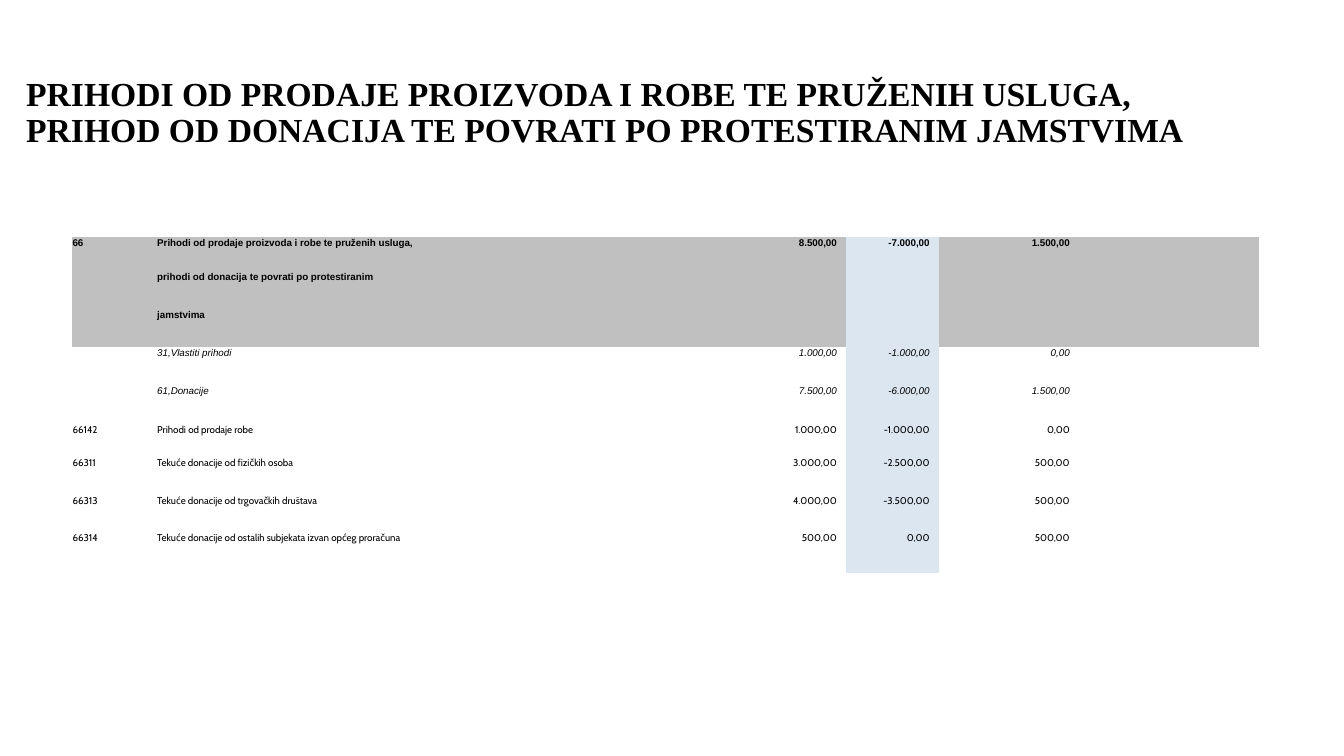
import pptx
import pptx.util
import pptx.dml.color
import pptx.enum.text
import pptx.oxml.ns

PX = 9144  # 100 px to the inch
COLORS = {"text": "000000", "group": "C0C0C0", "change": "DCE6F1"}
NO_GRID_STYLE = "{2D5ABB26-0587-4C30-8999-92F81FD0307C}"

TITLE = ("PRIHODI OD PRODAJE PROIZVODA I ROBE TE PRUŽENIH USLUGA, "
         "PRIHOD OD DONACIJA TE POVRATI PO PROTESTIRANIM JAMSTVIMA")

# Row kinds: text format and base fill
KINDS = {
    "group": ({"font": "Arial", "bold": True}, "group"),
    "source": ({"font": "Arial", "italic": True}, None),
    "account": ({"font": "Cabin"}, None),
}

# Kind, height, then code, name, plan, change, new plan
ROWS = [
    ("group", 33, ("66", "Prihodi od prodaje proizvoda i robe te pruženih usluga,",
                   "8.500,00", "-7.000,00", "1.500,00")),
    ("group", 38, ("", "prihodi od donacija te povrati po protestiranim", "", "", "")),
    ("group", 38, ("", "jamstvima", "", "", "")),
    ("source", 38, ("", "31,Vlastiti prihodi", "1.000,00", "-1.000,00", "0,00")),
    ("source", 38, ("", "61,Donacije", "7.500,00", "-6.000,00", "1.500,00")),
    ("account", 33, ("66142", "Prihodi od prodaje robe",
                     "1.000,00", "-1.000,00", "0,00")),
    ("account", 37, ("66311", "Tekuće donacije od fizičkih osoba",
                     "3.000,00", "-2.500,00", "500,00")),
    ("account", 37, ("66313", "Tekuće donacije od trgovačkih društava",
                     "4.000,00", "-3.500,00", "500,00")),
    ("account", 42, ("66314", "Tekuće donacije od ostalih subjekata izvan općeg proračuna",
                     "500,00", "0,00", "500,00")),
]

# Width, left inset, right inset, alignment
COLUMNS = [(66, 1, 1, "LEFT"), (479, 19, 1, "LEFT"), (223, 1, 9, "RIGHT"),
           (92, 1, 9, "RIGHT"), (318, 1, 188, "RIGHT")]
CHANGE_COLUMN = 3


def px(n):
    return pptx.util.Emu(n * PX)


def rgb(name):
    return pptx.dml.color.RGBColor.from_string(COLORS[name])


def write(tf, text, size=7, font="Arial", bold=False, italic=False,
          align="LEFT", spacing=None):
    p = tf.paragraphs[0]
    p.alignment = getattr(pptx.enum.text.PP_ALIGN, align)
    p.line_spacing = spacing
    r = p.add_run()
    r.text = text
    r.font.size = pptx.util.Pt(size)
    r.font.name = font
    r.font.bold = bold
    r.font.italic = italic
    r.font.color.rgb = rgb("text")


def add_title(s, text, left, top, width, height):
    sp = s.shapes.title
    sp.left, sp.top, sp.width, sp.height = map(px, (left, top, width, height))
    tf = sp.text_frame
    tf.word_wrap = True
    tf.auto_size = pptx.enum.text.MSO_AUTO_SIZE.NONE
    tf.vertical_anchor = pptx.enum.text.MSO_ANCHOR.MIDDLE
    write(tf, text, size=24, font="Times New Roman", bold=True, spacing=0.9)


def fill_cell(cell, text, left, right, fill, **text_format):
    cell.margin_left, cell.margin_right = px(left), px(right)
    cell.margin_top, cell.margin_bottom = px(1), 0
    if fill:
        cell.fill.solid()
        cell.fill.fore_color.rgb = rgb(fill)
    else:
        cell.fill.background()
    write(cell.text_frame, text, **text_format)


def add_revenue_table(s, left, top):
    width = sum(column[0] for column in COLUMNS)
    height = sum(row[1] for row in ROWS)
    frame = s.shapes.add_table(len(ROWS), len(COLUMNS),
                               *map(px, (left, top, width, height)))
    table = frame.table
    table.first_row = table.horz_banding = False
    style = frame._element.find(".//" + pptx.oxml.ns.qn("a:tableStyleId"))
    style.text = NO_GRID_STYLE

    for column, (column_width, *_) in zip(table.columns, COLUMNS):
        column.width = px(column_width)
    for i, (kind, row_height, texts) in enumerate(ROWS):
        table.rows[i].height = px(row_height)
        text_format, row_fill = KINDS[kind]
        for j, (text, column) in enumerate(zip(texts, COLUMNS)):
            _, inset_left, inset_right, align = column
            fill = "change" if j == CHANGE_COLUMN else row_fill
            fill_cell(table.cell(i, j), text, inset_left, inset_right, fill,
                      align=align, **text_format)


def main():
    prs = pptx.Presentation()
    prs.slide_width, prs.slide_height = px(1333), px(750)
    s = prs.slides.add_slide(prs.slide_layouts[5])  # title only
    add_title(s, TITLE, 16, 40, 1226, 145)
    add_revenue_table(s, 71, 235)
    prs.save("out.pptx")


if __name__ == "__main__":
    main()
